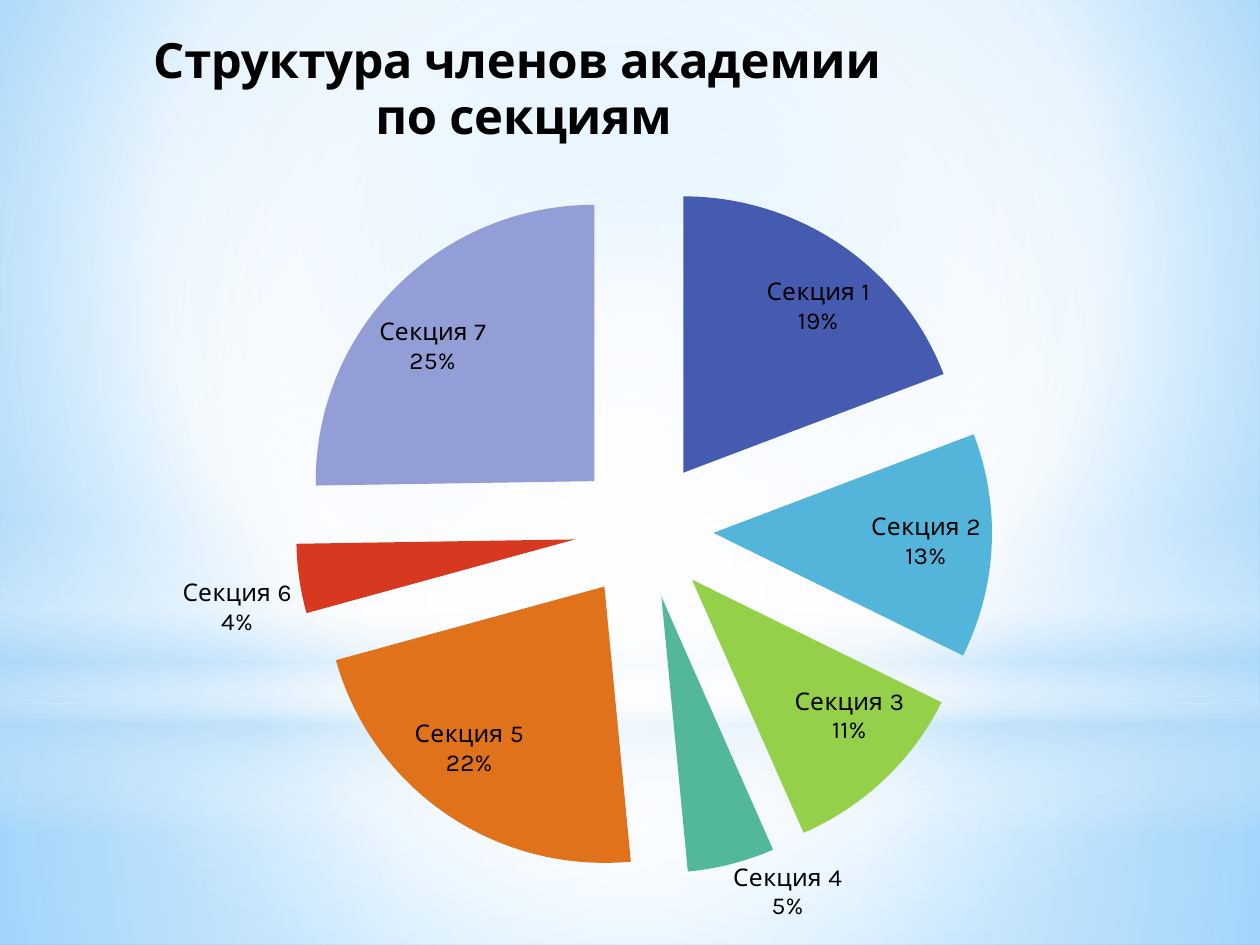
from dataclasses import dataclass
from typing import NamedTuple

from lxml import etree
from pptx import Presentation
from pptx.chart.data import CategoryChartData
from pptx.dml.color import RGBColor
from pptx.enum.chart import XL_CHART_TYPE, XL_LABEL_POSITION
from pptx.enum.shapes import MSO_SHAPE
from pptx.oxml.ns import qn
from pptx.util import Pt

PIE = XL_CHART_TYPE.PIE
BEST_FIT = XL_LABEL_POSITION.BEST_FIT
RECTANGLE = MSO_SHAPE.RECTANGLE
OVAL = MSO_SHAPE.OVAL


@dataclass(frozen=True)
class Theme:
    font: str = "Karla"
    text: str = "000000"
    white: str = "FFFFFF"
    haze: str = "B4DCFA"
    sky: str = "9ED5FF"
    deep_sky: str = "5BB9FF"
    title_size: int = 28
    label_size: int = 14
    base_size: int = 10


THEME = Theme()


class Stop(NamedTuple):
    position: int
    color: str
    opacity: int = 100


class Gradient(NamedTuple):
    stops: list[Stop]
    focus: tuple[int, int, int, int] | None = (50, 50, 50, 50)
    angle: int = 0


class Glow(NamedTuple):
    shape: MSO_SHAPE
    top: float
    height: float
    gradient: Gradient


class Section(NamedTuple):
    name: str
    share: int
    color: str


BACKDROP = Gradient(
    [Stop(0, THEME.sky), Stop(60, THEME.white), Stop(100, THEME.deep_sky)],
    focus=(20, 10, 20, 60))

GLOWS = [
    Glow(RECTANGLE, 401.8, 138.2, Gradient(
        [Stop(0, THEME.white, 91), Stop(37, THEME.white, 76), Stop(100, THEME.haze, 79)])),
    Glow(RECTANGLE, 0, 401.8, Gradient(
        [Stop(0, THEME.white, 89), Stop(48, THEME.white, 62), Stop(100, THEME.haze, 79)])),
    Glow(RECTANGLE, 297, 180, Gradient(
        [Stop(0, THEME.white, 0), Stop(29, THEME.white, 30), Stop(45, THEME.haze, 40),
         Stop(55, THEME.white, 26), Stop(65, THEME.haze, 60), Stop(100, THEME.white, 0)],
        focus=None, angle=90)),
    Glow(OVAL, 126, 401.8, Gradient(
        [Stop(0, THEME.white), Stop(56, THEME.white, 0)])),
]

SECTIONS = [
    Section("Секция 1", 19, "455BB0"),
    Section("Секция 2", 13, "53B5D9"),
    Section("Секция 3", 11, "94D049"),
    Section("Секция 4", 5, "53B79C"),
    Section("Секция 5", 22, "E1721C"),
    Section("Секция 6", 4, "D6391F"),
    Section("Секция 7", 25, "939ED6"),
]


def add_child(parent, tag: str, **attributes):
    child = etree.SubElement(parent, qn(tag))
    for name, value in attributes.items():
        child.set(name, str(value))
    return child


def paint_gradient(fill, owner, gradient: Gradient) -> None:
    fill.gradient()
    element = owner.find(".//" + qn("a:gradFill"))
    for child in list(element):
        element.remove(child)
    stop_list = add_child(element, "a:gsLst")
    for stop in gradient.stops:
        mark = add_child(stop_list, "a:gs", pos=stop.position * 1000)
        color = add_child(mark, "a:srgbClr", val=stop.color)
        if stop.opacity < 100:
            add_child(color, "a:alpha", val=stop.opacity * 1000)
    if gradient.focus is None:
        add_child(element, "a:lin", ang=gradient.angle * 60000, scaled=0)
    else:
        route = add_child(element, "a:path", path="circle")
        sides = {side: value * 1000 for side, value in zip("ltrb", gradient.focus)}
        add_child(route, "a:fillToRect", **sides)


def add_glow(page, width: int, glow: Glow) -> None:
    shape = page.shapes.add_shape(glow.shape, 0, Pt(glow.top), width, Pt(glow.height))
    shape.shadow.inherit = False
    shape.line.fill.background()
    paint_gradient(shape.fill, shape._element, glow.gradient)


def set_layout(element, index: int, inner: bool = False, **place: float) -> None:
    """Give a chart part a manual place, in fractions of the chart."""
    for old in element.findall(qn("c:layout")):
        element.remove(old)
    layout = etree.Element(qn("c:layout"))
    manual = add_child(layout, "c:manualLayout")
    if inner:
        add_child(manual, "c:layoutTarget", val="inner")
    for mode in ("c:xMode", "c:yMode"):
        add_child(manual, mode, val="edge")
    for name, value in place.items():
        add_child(manual, f"c:{name}", val=value)
    element.insert(index, layout)


def style_font(font, size: int, bold: bool = False) -> None:
    font.name = THEME.font
    font.size = Pt(size)
    font.bold = bold
    font.color.rgb = RGBColor.from_string(THEME.text)


def add_section_chart(page) -> None:
    data = CategoryChartData()
    data.categories = [section.name for section in SECTIONS]
    data.add_series("Series 1", [section.share for section in SECTIONS])
    frame = page.shapes.add_chart(PIE, Pt(-54), 0, Pt(819.4), Pt(530.6), data)
    chart = frame.chart
    chart.has_legend = False
    style_font(chart.font, THEME.base_size)

    # Title
    title = chart.chart_title
    title.text_frame.text = "Структура членов академии \nпо секциям"
    for para in title.text_frame.paragraphs:
        for span in para.runs:
            style_font(span.font, THEME.title_size, bold=True)
    set_layout(title._element, 1, x=0.17, y=0.03)

    # Slices
    plot = chart.plots[0]
    plot.vary_by_categories = True
    series = plot.series[0]
    for index, section in enumerate(SECTIONS):
        slice_format = series.points[index].format
        slice_format.fill.solid()
        slice_format.fill.fore_color.rgb = RGBColor.from_string(section.color)
        slice_format.line.fill.background()
    explosion = etree.Element(qn("c:explosion"), val="25")
    series._element.find(qn("c:dPt")).addprevious(explosion)

    # Labels
    labels = series.data_labels
    labels.show_category_name = True
    labels.show_percentage = True
    labels.show_value = False
    labels.number_format = "0%"
    labels.number_format_is_linked = False
    labels.position = BEST_FIT
    style_font(labels.font, THEME.label_size)
    separator = etree.Element(qn("c:separator"))
    separator.text = "\n"
    labels._element.find(qn("c:showBubbleSize")).addnext(separator)

    plot_area = chart._chartSpace.find(".//" + qn("c:plotArea"))
    set_layout(plot_area, 0, inner=True, x=0.26, y=0.2, w=0.51, h=0.75)


def main() -> None:
    deck = Presentation()
    deck.slide_width, deck.slide_height = Pt(720), Pt(540)
    page = deck.slides.add_slide(deck.slide_layouts[6])

    # Sky backdrop
    paint_gradient(page.background.fill, page._element, BACKDROP)
    for glow in GLOWS:
        add_glow(page, deck.slide_width, glow)

    add_section_chart(page)
    deck.save("out.pptx")


if __name__ == "__main__":
    main()
